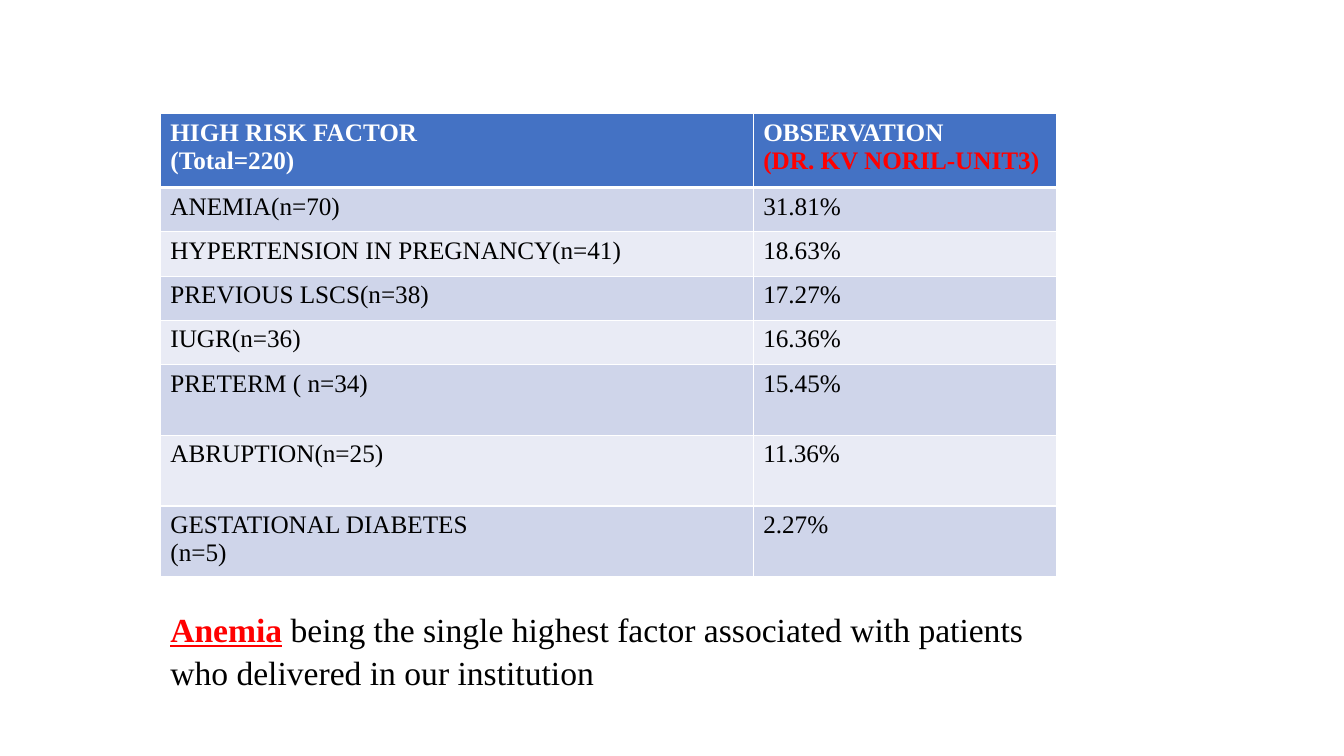
from dataclasses import dataclass
from typing import Optional

from lxml import etree
from pptx import Presentation
from pptx.dml.color import RGBColor
from pptx.oxml.ns import qn
from pptx.table import Table, _Cell
from pptx.text.text import _Paragraph
from pptx.util import Inches, Pt


@dataclass(frozen=True)
class Theme:
    font: str = "Times New Roman"
    table_size: int = 18
    conclusion_size: int = 24
    black: str = "000000"
    white: str = "FFFFFF"
    red: str = "FF0000"
    header: str = "4472C4"
    odd_band: str = "CFD5EA"
    even_band: str = "E9EBF5"


@dataclass(frozen=True)
class RiskFactor:
    label: str
    observation: str
    height: float


THEME = Theme()
HEADER_HEIGHT = 0.73
COLUMN_WIDTHS = (5.88, 3.01)
RISK_FACTORS = (
    RiskFactor("ANEMIA(n=70)", "31.81%", 0.44),
    RiskFactor("HYPERTENSION IN PREGNANCY(n=41)", "18.63%", 0.44),
    RiskFactor("PREVIOUS LSCS(n=38)", "17.27%", 0.44),
    RiskFactor("IUGR(n=36)", "16.36%", 0.44),
    RiskFactor("PRETERM ( n=34)", "15.45%", 0.7),
    RiskFactor("ABRUPTION(n=25)", "11.36%", 0.7),
    RiskFactor("GESTATIONAL DIABETES\n(n=5)", "2.27%", 0.7),
)


def add_text(
    paragraph: _Paragraph,
    text: str,
    *,
    size: int = THEME.table_size,
    color: str = THEME.black,
    bold: bool = False,
    underline: bool = False,
) -> None:
    run = paragraph.add_run()
    run.text = text
    run.font.name = THEME.font
    run.font.size = Pt(size)
    run.font.color.rgb = RGBColor.from_string(color)
    run.font.bold = bold
    run.font.underline = underline


def add_borders(cell: _Cell, bottom_width: float) -> None:
    properties = cell._tc.get_or_add_tcPr()
    for side, width in (("L", 1), ("R", 1), ("T", 1), ("B", bottom_width)):
        line = etree.SubElement(properties, qn(f"a:ln{side}"), w=str(Pt(width)))
        fill = etree.SubElement(line, qn("a:solidFill"))
        etree.SubElement(fill, qn("a:srgbClr"), val=THEME.white)


def fill_cell(
    cell: _Cell,
    text: str,
    fill: str,
    *,
    color: str = THEME.black,
    last_color: Optional[str] = None,
    bold: bool = False,
    bottom_width: float = 1,
) -> None:
    add_borders(cell, bottom_width)
    cell.fill.solid()
    cell.fill.fore_color.rgb = RGBColor.from_string(fill)
    lines = text.split("\n")
    for index, line in enumerate(lines):
        paragraph = cell.text_frame.add_paragraph() if index else cell.text_frame.paragraphs[0]
        is_last = index == len(lines) - 1
        line_color = last_color if last_color and is_last else color
        add_text(paragraph, line, color=line_color, bold=bold)


def fill_table(table: Table) -> None:
    for column, width in zip(table.columns, COLUMN_WIDTHS):
        column.width = Inches(width)
    table.rows[0].height = Inches(HEADER_HEIGHT)
    headings = (
        ("HIGH RISK FACTOR\n(Total=220)", THEME.white),
        ("OBSERVATION\n(DR. KV NORIL-UNIT3)", THEME.red),
    )
    for column_index, (heading, last_color) in enumerate(headings):
        fill_cell(
            table.cell(0, column_index),
            heading,
            THEME.header,
            color=THEME.white,
            last_color=last_color,
            bold=True,
            bottom_width=3,
        )
    for row_index, factor in enumerate(RISK_FACTORS, start=1):
        table.rows[row_index].height = Inches(factor.height)
        band = THEME.odd_band if row_index % 2 else THEME.even_band
        fill_cell(table.cell(row_index, 0), factor.label, band)
        fill_cell(table.cell(row_index, 1), factor.observation, band)


def main() -> None:
    presentation = Presentation()
    presentation.slide_width = Inches(13.33)
    presentation.slide_height = Inches(7.5)
    slide = presentation.slides.add_slide(presentation.slide_layouts[6])

    table_height = HEADER_HEIGHT + sum(factor.height for factor in RISK_FACTORS)
    table_shape = slide.shapes.add_table(
        len(RISK_FACTORS) + 1,
        len(COLUMN_WIDTHS),
        Inches(1.59),
        Inches(1.13),
        Inches(sum(COLUMN_WIDTHS)),
        Inches(table_height),
    )
    fill_table(table_shape.table)

    conclusion = slide.shapes.add_textbox(Inches(1.59), Inches(5.56), Inches(8.99), Inches(1.31))
    conclusion.text_frame.word_wrap = True
    conclusion.text_frame.margin_top = Inches(0.45)
    paragraph = conclusion.text_frame.paragraphs[0]
    paragraph.line_spacing = 1.07
    add_text(
        paragraph,
        "Anemia",
        size=THEME.conclusion_size,
        color=THEME.red,
        bold=True,
        underline=True,
    )
    add_text(
        paragraph,
        " being the single highest factor associated with patients who delivered in our institution",
        size=THEME.conclusion_size,
    )
    presentation.save("out.pptx")


if __name__ == "__main__":
    main()
